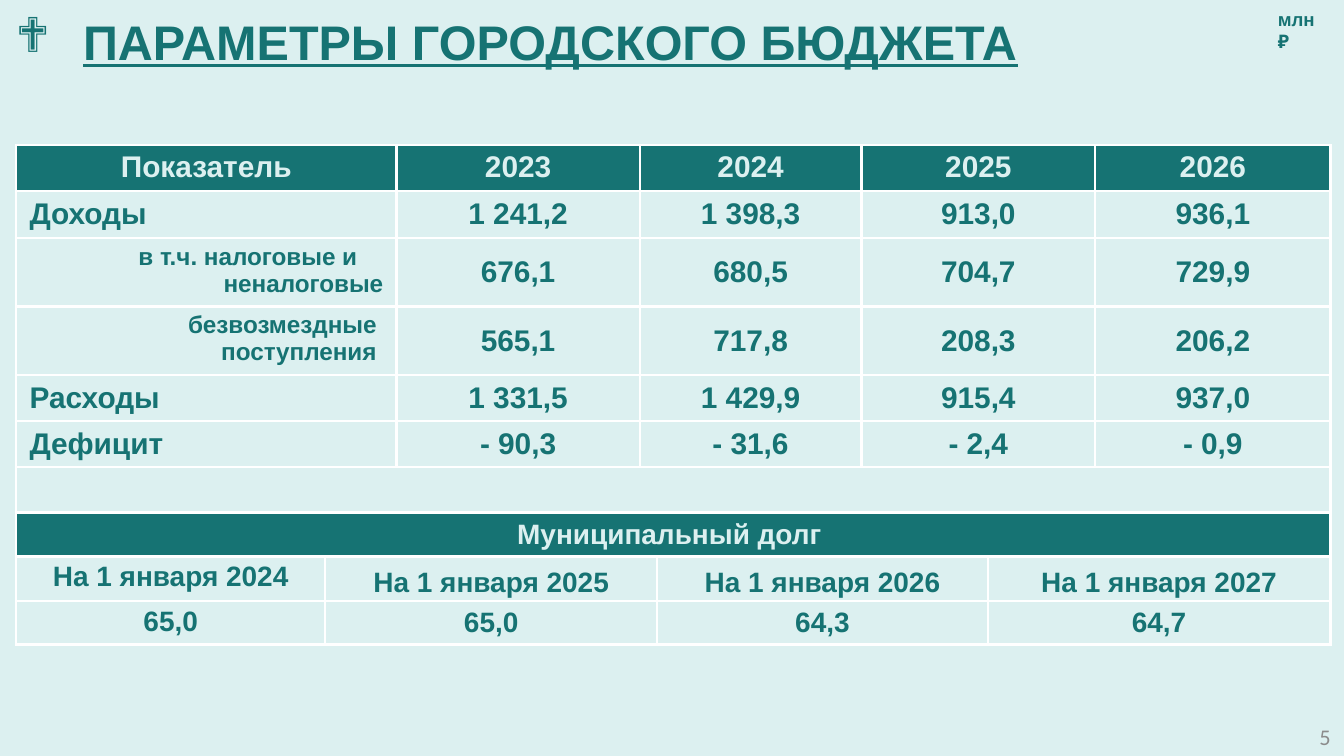
from dataclasses import dataclass
from typing import Optional

from lxml import etree
from pptx import Presentation
from pptx.dml.color import RGBColor
from pptx.enum import text
from pptx.oxml import ns
from pptx.util import Inches, Pt

COLORS = {"background": "DCF0F0", "teal": "167373", "border": "FFFFFF", "gray": "8C8C8C"}
LEFT, CENTER, RIGHT = text.PP_ALIGN.LEFT, text.PP_ALIGN.CENTER, text.PP_ALIGN.RIGHT
TOP, MIDDLE = text.MSO_ANCHOR.TOP, text.MSO_ANCHOR.MIDDLE

TABLE_BOX = (0.12, 1.08, 9.78, 3.71)
COLUMN_WIDTHS = [2.3, 0.53, 1.81, 0.13, 1.52, 0.94, 0.8, 1.75]
ROW_HEIGHTS = [0.3, 0.35, 0.42, 0.42, 0.33, 0.33, 0.3, 0.3, 0.33, 0.3]
BUDGET_SPANS = [2, 1, 2, 2, 1]
DEBT_SPANS = [1, 3, 2, 2]
FULL_SPAN = [8]


@dataclass
class TextStyle:
    size: float
    color: str = "teal"
    bold: bool = True
    font: str = "Arial"
    underline: bool = False
    align: text.PP_ALIGN = CENTER


@dataclass
class CellLook:
    style: TextStyle
    fill: Optional[str] = None
    anchor: text.MSO_ANCHOR = MIDDLE
    side_margin: float = 0.1
    end_margin: float = 0.15 / 4
    line_spacing: Optional[float] = None
    first_line_indent: float = 0


@dataclass
class TableRow:
    spans: list[int]
    texts: list[str]
    label: CellLook
    value: CellLook


HEADER = CellLook(TextStyle(16, "background"), "teal", TOP)
VALUE = CellLook(TextStyle(16))
LABEL = CellLook(TextStyle(16, align=LEFT))
SUBLABEL = CellLook(TextStyle(13, align=RIGHT), anchor=TOP)
STEPPED_SUBLABEL = CellLook(TextStyle(13, align=RIGHT), anchor=TOP, first_line_indent=0.81)
DEBT_HEADER = CellLook(TextStyle(15, "background"), "teal")
DEBT_FIRST = CellLook(TextStyle(15), anchor=TOP)
DEBT_DATE = CellLook(TextStyle(15), side_margin=0.07, end_margin=0, line_spacing=1.25)
DEBT_VALUE = CellLook(TextStyle(15), side_margin=0.07, end_margin=0)

ROWS = [
    TableRow(BUDGET_SPANS, ["Показатель", "2023", "2024", "2025", "2026"], HEADER, HEADER),
    TableRow(BUDGET_SPANS, ["Доходы", "1 241,2", "1 398,3", "913,0", "936,1"], LABEL, VALUE),
    TableRow(BUDGET_SPANS, ["в т.ч. налоговые и\nненалоговые", "676,1", "680,5", "704,7", "729,9"],
             STEPPED_SUBLABEL, VALUE),
    TableRow(BUDGET_SPANS, ["безвозмездные \nпоступления ", "565,1", "717,8", "208,3", "206,2"],
             SUBLABEL, VALUE),
    TableRow(BUDGET_SPANS, ["Расходы", "1 331,5", "1 429,9", "915,4", "937,0"], LABEL, VALUE),
    TableRow(BUDGET_SPANS, ["Дефицит", "- 90,3", "- 31,6", "- 2,4", "- 0,9"], LABEL, VALUE),
    TableRow(FULL_SPAN, [""], VALUE, VALUE),
    TableRow(FULL_SPAN, ["Муниципальный долг "], DEBT_HEADER, DEBT_HEADER),
    TableRow(DEBT_SPANS, [f"На 1 января {year}" for year in range(2024, 2028)],
             DEBT_FIRST, DEBT_DATE),
    TableRow(DEBT_SPANS, ["65,0", "65,0", "64,3", "64,7"], DEBT_FIRST, DEBT_VALUE),
]


def rgb(name: str) -> RGBColor:
    return RGBColor.from_string(COLORS[name])


def format_paragraph(paragraph, style: TextStyle) -> None:
    paragraph.alignment = style.align
    for font in [paragraph.font] + [run.font for run in paragraph.runs]:
        font.name = style.font
        font.size = Pt(style.size)
        font.bold = style.bold
        font.underline = style.underline
        font.color.rgb = rgb(style.color)


def add_bullet(paragraph, character: str, indent: float) -> None:
    properties = paragraph._p.get_or_add_pPr()
    properties.set("marL", str(Inches(indent)))
    properties.set("indent", str(-Inches(indent)))
    etree.SubElement(properties, ns.qn("a:buFont")).set("typeface", "Wingdings")
    etree.SubElement(properties, ns.qn("a:buChar")).set("char", character)


def add_text(slide, content: str, box: tuple[float, float, float, float], style: TextStyle,
             anchor: text.MSO_ANCHOR = TOP, wrap: bool = False, bullet: str = "") -> None:
    """Add a text box; one that does not wrap grows with its text."""
    shape = slide.shapes.add_textbox(*map(Inches, box))
    frame = shape.text_frame
    frame.word_wrap = wrap
    if not wrap:
        frame.auto_size = text.MSO_AUTO_SIZE.SHAPE_TO_FIT_TEXT
    frame.vertical_anchor = anchor
    frame.text = content
    paragraph = frame.paragraphs[0]
    if bullet:
        add_bullet(paragraph, bullet, 0.5)
    format_paragraph(paragraph, style)


def add_borders(cell) -> None:
    properties = cell._tc.get_or_add_tcPr()
    for side in ("lnL", "lnR", "lnT", "lnB"):
        line = etree.SubElement(properties, ns.qn(f"a:{side}"), w=str(Pt(1.5)))
        fill = etree.SubElement(line, ns.qn("a:solidFill"))
        etree.SubElement(fill, ns.qn("a:srgbClr"), val=COLORS["border"])


def fill_cell(cell, content: str, look: CellLook) -> None:
    cell.vertical_anchor = look.anchor
    cell.margin_left = cell.margin_right = Inches(look.side_margin)
    cell.margin_top = cell.margin_bottom = Inches(look.end_margin)
    cell.text_frame.text = content
    for paragraph in cell.text_frame.paragraphs:
        format_paragraph(paragraph, look.style)
        if look.line_spacing:
            paragraph.line_spacing = look.line_spacing
    if look.first_line_indent:
        first = cell.text_frame.paragraphs[0]
        first.alignment = LEFT
        first._p.get_or_add_pPr().set("marL", str(Inches(look.first_line_indent)))


def add_budget_table(slide) -> None:
    frame = slide.shapes.add_table(len(ROWS), len(COLUMN_WIDTHS), *map(Inches, TABLE_BOX))
    table = frame.table
    for column, width in zip(table.columns, COLUMN_WIDTHS):
        column.width = Inches(width)
    for row_index, (row, height) in enumerate(zip(ROWS, ROW_HEIGHTS)):
        table.rows[row_index].height = Inches(height)
        start = 0
        for position, (span, content) in enumerate(zip(row.spans, row.texts)):
            look = row.value if position else row.label
            for column_index in range(start, start + span):
                cell = table.cell(row_index, column_index)
                add_borders(cell)
                if look.fill:
                    cell.fill.solid()
                    cell.fill.fore_color.rgb = rgb(look.fill)
                else:
                    cell.fill.background()
            origin = table.cell(row_index, start)
            if span > 1:
                origin.merge(table.cell(row_index, start + span - 1))
            fill_cell(origin, content, look)
            start += span
    frame.height = Inches(TABLE_BOX[3])


def main() -> None:
    presentation = Presentation()
    presentation.slide_width = Inches(10)
    presentation.slide_height = presentation.slide_width * 9 // 16
    slide = presentation.slides.add_slide(presentation.slide_layouts[6])
    slide.background.fill.solid()
    slide.background.fill.fore_color.rgb = rgb("background")

    add_text(slide, "ПАРАМЕТРЫ ГОРОДСКОГО БЮДЖЕТА", (0.02, 0.04, 7.73, 0.54),
             TextStyle(26, underline=True, align=LEFT), bullet="❖")
    add_budget_table(slide)
    add_text(slide, "5", (7.67, 5.33, 2.33, 0.3),
             TextStyle(12, "gray", bold=False, font="Calibri", align=RIGHT), MIDDLE, wrap=True)
    add_text(slide, "млн ₽", (9.41, 0.01, 0.59, 0.27), TextStyle(10, align=LEFT))
    presentation.save("out.pptx")


if __name__ == "__main__":
    main()
